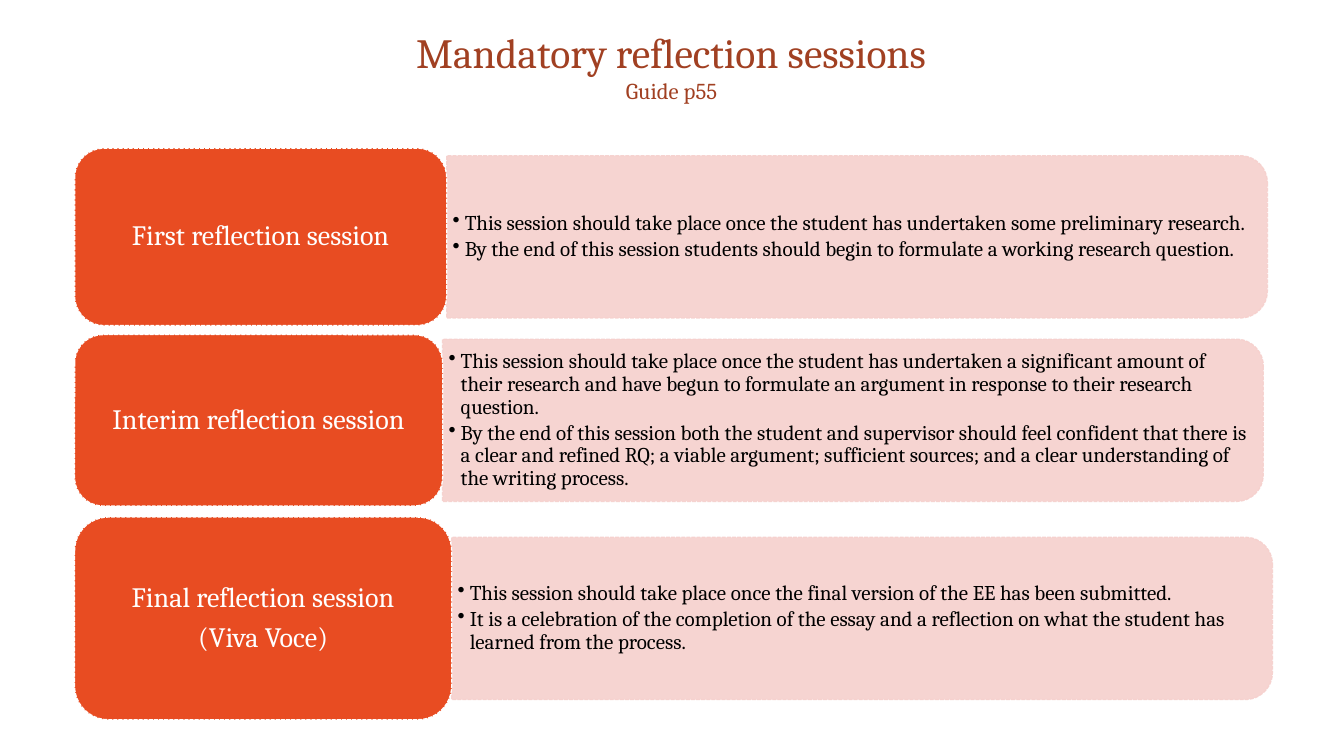
from dataclasses import dataclass

from lxml.etree import SubElement
from pptx import Presentation
from pptx.dml.color import RGBColor
from pptx.enum.dml import MSO_LINE_DASH_STYLE as Dash
from pptx.enum.shapes import MSO_SHAPE as Shape
from pptx.enum.text import MSO_ANCHOR as Anchor, PP_ALIGN as Align
from pptx.oxml.ns import qn
from pptx.util import Inches, Pt


@dataclass(frozen=True)
class Theme:
    font: str = "Cambria"
    heading: RGBColor = RGBColor(0xA1, 0x40, 0x22)
    label: RGBColor = RGBColor(0xE8, 0x4C, 0x22)
    panel: RGBColor = RGBColor(0xF6, 0xD0, 0xCD)
    white: RGBColor = RGBColor(0xFF, 0xFF, 0xFF)
    black: RGBColor = RGBColor(0, 0, 0)
    title_size: Pt = Pt(29.7)
    subtitle_size: Pt = Pt(16.2)
    label_size: Pt = Pt(20)
    bullet_size: Pt = Pt(15)
    outline: Pt = Pt(0.9)
    panel_opacity: int = 90


THEME = Theme()

# Layout in inches
LABEL_LEFT = 0.74
PANEL_WIDTH, PANEL_HEIGHT = 8.14, 1.61
BULLETS_WIDTH, BULLETS_HEIGHT = 8.06, 1.45

# Label lines, label top, width and height, bullet points
SESSIONS = [
    (["First reflection session"], 1.47, 3.69, 1.76, [
        "This session should take place once the student has undertaken some preliminary research.",
        "By the end of this session students should begin to formulate a working research question.",
    ]),
    (["Interim reflection session"], 3.32, 3.65, 1.7, [
        "This session should take place once the student has undertaken a significant amount of "
        "their research and have begun to formulate an argument in response to their research question.",
        "By the end of this session both the student and supervisor should feel confident that there is "
        "a clear and refined RQ; a viable argument; sufficient sources; and a clear understanding of "
        "the writing process.",
    ]),
    (["Final reflection session", "(Viva Voce)"], 5.13, 3.74, 2.01, [
        "This session should take place once the final version of the EE has been submitted.",
        "It is a celebration of the completion of the essay and a reflection on what the student has "
        "learned from the process.",
    ]),
]


def set_frame(frame, anchor, side, edge):
    frame.word_wrap = True
    frame.vertical_anchor = anchor
    frame.margin_left = frame.margin_right = Inches(side)
    frame.margin_top = frame.margin_bottom = Inches(edge)


def style_font(font, size, color):
    font.name = THEME.font
    font.size = size
    font.color.rgb = color


def write_paragraphs(frame, lines, size, color, align, space_after):
    frame.text = "\n".join(lines)
    for paragraph in frame.paragraphs:
        paragraph.alignment = align
        paragraph.line_spacing = 0.9
        paragraph.space_after = space_after
        style_font(paragraph.font, size, color)


def add_bullet(paragraph):
    properties = paragraph._p.get_or_add_pPr()
    properties.set("marL", str(Inches(0.12)))
    properties.set("indent", str(Inches(-0.12)))
    SubElement(properties, qn("a:buChar")).set("char", "•")


def set_opacity(fill_format, percent):
    color = fill_format._xPr.find(qn("a:solidFill"))[0]
    SubElement(color, qn("a:alpha")).set("val", str(percent * 1000))


def add_box(slide, kind, left, top, width, height, fill, line):
    shape = slide.shapes.add_shape(
        kind, Inches(left), Inches(top), Inches(width), Inches(height))
    shape.shadow.inherit = False
    shape.fill.solid()
    shape.fill.fore_color.rgb = fill
    shape.line.color.rgb = line
    shape.line.width = THEME.outline
    shape.line.dash_style = Dash.SQUARE_DOT
    return shape


def add_title(slide, title, subtitle):
    box = slide.shapes.add_textbox(
        Inches(0.44), Inches(0.25), Inches(12.44), Inches(0.83))
    set_frame(box.text_frame, Anchor.BOTTOM, 0.09, 0.05)
    paragraph = box.text_frame.paragraphs[0]
    paragraph.alignment = Align.CENTER
    title_run = paragraph.add_run()
    title_run.text = title
    paragraph.add_line_break()
    subtitle_run = paragraph.add_run()
    subtitle_run.text = subtitle
    style_font(title_run.font, THEME.title_size, THEME.heading)
    style_font(subtitle_run.font, THEME.subtitle_size, THEME.heading)


def add_panel(slide, left, middle, bullets):
    # The upright shape is turned so that its rounded end faces right
    panel = add_box(slide, Shape.ROUND_2_SAME_RECTANGLE,
                    left + (PANEL_WIDTH - PANEL_HEIGHT) / 2, middle - PANEL_WIDTH / 2,
                    PANEL_HEIGHT, PANEL_WIDTH, THEME.panel, THEME.panel)
    panel.rotation = 90
    set_opacity(panel.fill, THEME.panel_opacity)
    set_opacity(panel.line.fill, THEME.panel_opacity)

    # The bullets stay level in their own box
    box = slide.shapes.add_textbox(
        Inches(left), Inches(middle - BULLETS_HEIGHT / 2),
        Inches(BULLETS_WIDTH), Inches(BULLETS_HEIGHT))
    set_frame(box.text_frame, Anchor.MIDDLE, 0.06, 0.03)
    write_paragraphs(box.text_frame, bullets, THEME.bullet_size, THEME.black,
                     Align.LEFT, Pt(2.25))
    for paragraph in box.text_frame.paragraphs:
        add_bullet(paragraph)


def add_label(slide, lines, top, width, height):
    label = add_box(slide, Shape.ROUNDED_RECTANGLE, LABEL_LEFT, top, width, height,
                    THEME.label, THEME.white)
    set_frame(label.text_frame, Anchor.MIDDLE, 0.08, 0.04)
    write_paragraphs(label.text_frame, lines, THEME.label_size, THEME.white,
                     Align.CENTER, Pt(7))


def main():
    presentation = Presentation()
    presentation.slide_width = Inches(13.33)
    presentation.slide_height = Inches(7.5)
    slide = presentation.slides.add_slide(presentation.slide_layouts[6])

    add_title(slide, "Mandatory reflection sessions", "Guide p55")
    for lines, top, width, height, bullets in SESSIONS:
        add_panel(slide, LABEL_LEFT + width, top + height / 2, bullets)
        add_label(slide, lines, top, width, height)

    presentation.save("out.pptx")


if __name__ == "__main__":
    main()
